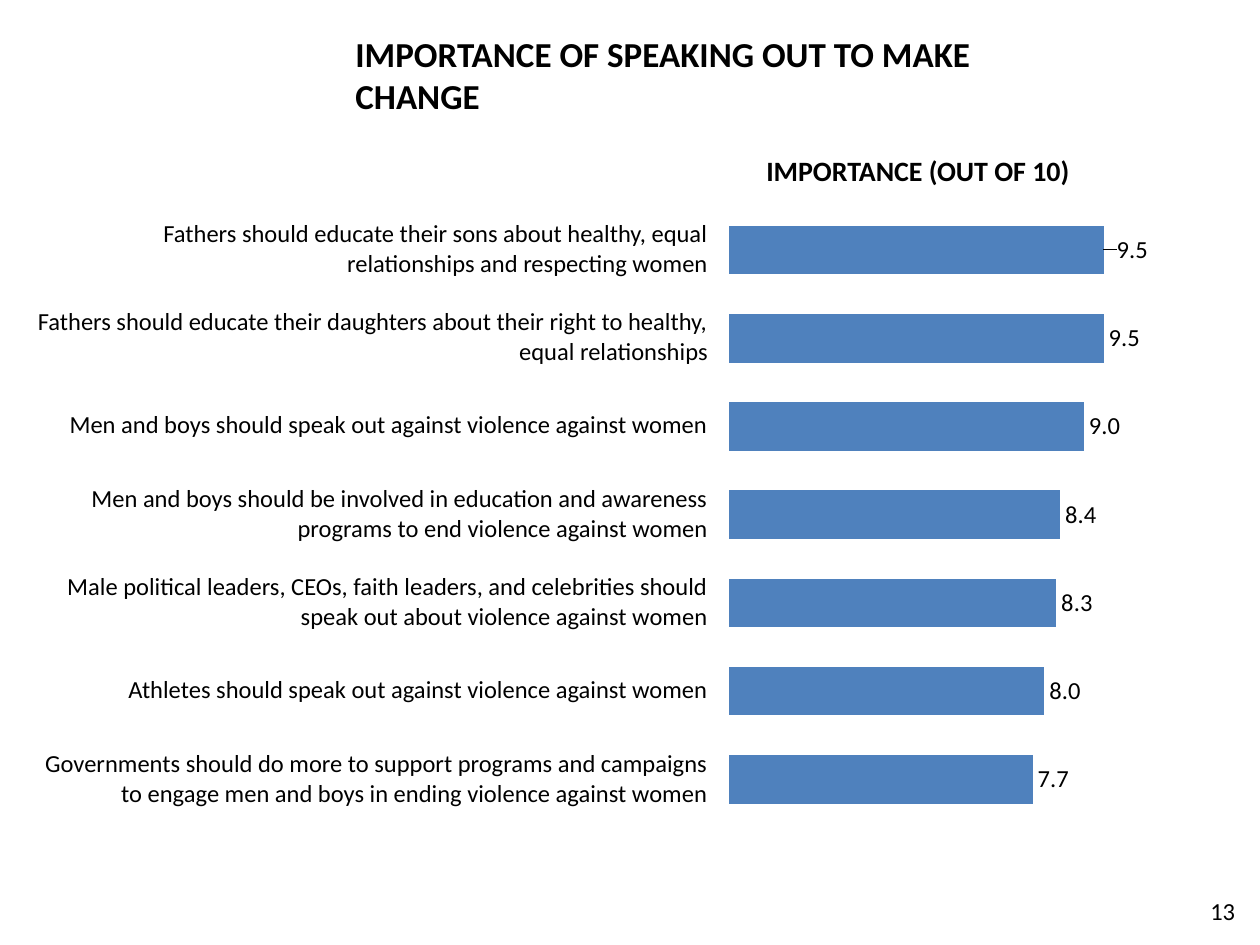
from lxml import etree
from pptx import Presentation
from pptx.chart.data import CategoryChartData
from pptx.dml.color import RGBColor
from pptx.enum.chart import XL_CHART_TYPE, XL_LABEL_POSITION
from pptx.enum.text import MSO_ANCHOR, PP_ALIGN
from pptx.oxml.ns import qn
from pptx.util import Cm, Pt

COLORS = {"text": "000000", "bar": "4F81BD", "background": "FFFFFF"}
FONT = "Calibri"
STATEMENTS = [
    ("Fathers should educate their sons about healthy, equal relationships and respecting women", 9.5),
    ("Fathers should educate their daughters about their right to healthy, equal relationships", 9.5),
    ("Men and boys should speak out against violence against women", 9.0),
    ("Men and boys should be involved in education and awareness programs to end violence against women", 8.4),
    ("Male political leaders, CEOs, faith leaders, and celebrities should speak out about violence against women", 8.3),
    ("Athletes should speak out against violence against women", 8.0),
    ("Governments should do more to support programs and campaigns to engage men and boys in ending violence against women", 7.7),
]


def color(name):
    return RGBColor.from_string(COLORS[name])


def style_font(font, size, bold=False):
    font.name = FONT
    font.size = Pt(size)
    font.bold = bold
    font.color.rgb = color("text")


def fill_text(tf, text, size, align, bold=False):
    tf.text = text
    tf.word_wrap = True
    p = tf.paragraphs[0]
    p.alignment = align
    style_font(p.runs[0].font, size, bold)


def add_title(s, left, top, width, height):
    title = s.shapes.title
    title.left, title.top, title.width, title.height = left, top, width, height
    title.text_frame.vertical_anchor = MSO_ANCHOR.TOP
    fill_text(title.text_frame, "IMPORTANCE OF SPEAKING OUT TO MAKE CHANGE",
              20, PP_ALIGN.LEFT, bold=True)


def add_label(s, text, size, box, bold=False):
    label = s.shapes.add_textbox(*box)
    fill_text(label.text_frame, text, size, PP_ALIGN.CENTER, bold)


def add_layout(parent, index, **settings):
    for old in parent.findall(qn("c:layout")):
        parent.remove(old)
    layout = etree.Element(qn("c:layout"))
    manual = etree.SubElement(layout, qn("c:manualLayout"))
    for tag, value in settings.items():
        etree.SubElement(manual, qn(f"c:{tag}")).set("val", str(value))
    parent.insert(index, layout)


def add_score_chart(s, left, top, width, height):
    data = CategoryChartData(number_format="0.0")
    scores = [score for _, score in reversed(STATEMENTS)]
    data.categories = [str(i) for i in range(1, len(scores) + 1)]
    data.add_series("Series 1", scores)
    chart = s.shapes.add_chart(XL_CHART_TYPE.BAR_CLUSTERED, left, top, width, height, data).chart
    chart.has_legend = chart.has_title = False
    style_font(chart.font, 18)

    chart.category_axis.visible = False
    axis = chart.value_axis
    axis.visible = axis.has_major_gridlines = False
    axis.minimum_scale, axis.maximum_scale = 0, 12

    plot = chart.plots[0]
    plot.gap_width = 81
    plot.vary_by_categories = False
    series = plot.series[0]
    series.format.fill.solid()
    series.format.fill.fore_color.rgb = color("bar")

    labels = series.data_labels
    labels.show_value = True
    labels.number_format = "#,##0.0"
    labels.number_format_is_linked = False
    labels.position = XL_LABEL_POSITION.OUTSIDE_END
    style_font(labels.font, 14)

    top_label = series.points[len(scores) - 1].data_label
    top_label.position = XL_LABEL_POSITION.OUTSIDE_END
    style_font(top_label.font, 14)
    add_layout(labels._element.find(qn("c:dLbl")), 1, x=0.015, y=0)

    add_layout(chart._chartSpace.chart.plotArea, 0, layoutTarget="inner",
               xMode="edge", yMode="edge", x=0.055, y=0.017, w=0.889, h=0.877)


def add_statement_table(s, left, top, width, height):
    table = s.shapes.add_table(len(STATEMENTS), 1, left, top, width, height).table
    table.first_row = table.horz_banding = False
    for row, (statement, _) in zip(table.rows, STATEMENTS):
        row.height = height // len(STATEMENTS)
        cell = row.cells[0]
        cell.fill.background()
        cell.vertical_anchor = MSO_ANCHOR.MIDDLE
        cell.margin_left = cell.margin_right = cell.margin_top = Cm(0.03)
        cell.margin_bottom = 0
        fill_text(cell.text_frame, statement, 14, PP_ALIGN.RIGHT)


def main():
    prs = Presentation()
    prs.slide_width, prs.slide_height = Cm(25.4), Cm(19.05)
    s = prs.slides.add_slide(prs.slide_layouts[5])
    s.background.fill.solid()
    s.background.fill.fore_color.rgb = color("background")
    add_title(s, Cm(6.91), Cm(0.53), Cm(13.21), Cm(1.96))
    add_score_chart(s, Cm(14.1), Cm(3.91), Cm(10.74), Cm(14.2))
    add_statement_table(s, Cm(0.71), Cm(4.11), Cm(13.59), Cm(12.47))
    add_label(s, "IMPORTANCE (OUT OF 10)", 16, (Cm(14.71), Cm(2.97), Cm(7.59), Cm(0.94)), bold=True)
    add_label(s, "13", 14, (Cm(23.9), Cm(17.93), Cm(1.5), Cm(1.12)))
    prs.save("out.pptx")


if __name__ == "__main__":
    main()
